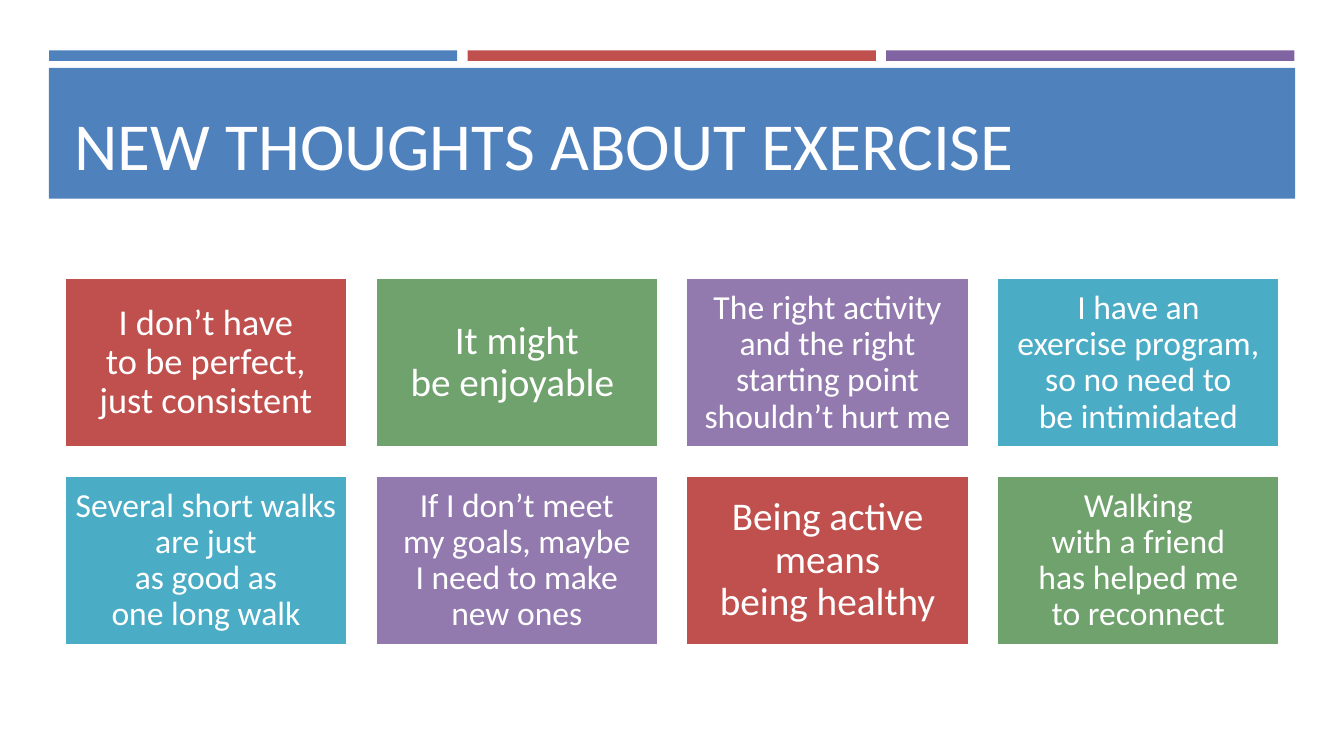
"""Build the slide of new thoughts about exercise."""
from dataclasses import dataclass

from pptx import Presentation
from pptx.dml.color import RGBColor
from pptx.enum.shapes import MSO_SHAPE
from pptx.enum.text import MSO_ANCHOR, MSO_AUTO_SIZE, PP_ALIGN
from pptx.shapes.autoshape import Shape
from pptx.slide import Slide
from pptx.text.text import TextFrame
from pptx.util import Pt

RECT = MSO_SHAPE.RECTANGLE
MIDDLE, BOTTOM = MSO_ANCHOR.MIDDLE, MSO_ANCHOR.BOTTOM
LEFT, CENTER = PP_ALIGN.LEFT, PP_ALIGN.CENTER
FIXED = MSO_AUTO_SIZE.NONE


@dataclass(frozen=True)
class Theme:
    """Hold the colours and type sizes."""
    font: str = "Calibri"
    blue: str = "4F81BD"
    red: str = "C0504D"
    plum: str = "8064A2"
    green: str = "6FA26C"
    lilac: str = "927AAE"
    teal: str = "4BACC6"
    white: str = "FFFFFF"
    cream: str = "FFFEFF"
    title: int = 48
    large: int = 28
    medium: int = 26
    small: int = 24


@dataclass(frozen=True)
class Box:
    """Place a rectangle, in points."""
    left: float
    top: float
    width: float
    height: float


@dataclass(frozen=True)
class Card:
    """Describe one thought."""
    text: str
    color: str
    size: int


THEME = Theme()
BARS = (THEME.blue, THEME.red, THEME.plum)
BAND = Box(34.9, 48.5, 890.2, 93.5)
HEAD = Box(46, 55.4, 868.3, 79.9)
COLS = 4
CARDS = (
    Card("I don’t have\nto be perfect,\njust consistent", THEME.red, THEME.medium),
    Card("It might\nbe enjoyable ", THEME.green, THEME.large),
    Card("The right activity and the right starting point shouldn’t hurt me",
         THEME.lilac, THEME.small),
    Card("I have an\nexercise program, so no need to\nbe intimidated",
         THEME.teal, THEME.small),
    Card("Several short walks are just\nas good as\none long walk",
         THEME.teal, THEME.small),
    Card("If I don’t meet\nmy goals, maybe\nI need to make new ones",
         THEME.lilac, THEME.small),
    Card("Being active means\nbeing healthy", THEME.red, THEME.large),
    Card("Walking\nwith a friend\nhas helped me\nto reconnect",
         THEME.green, THEME.small),
)


def apply(item: object, values: dict[str, object]) -> None:
    """Set each named value on the item."""
    for name, value in values.items():
        setattr(item, name, value)


def write(frame: TextFrame, text: str, size: int, color: str,
          look: dict[str, object], para: dict[str, object]) -> None:
    """Fill a text frame with one styled paragraph."""
    apply(frame, {"word_wrap": True, "auto_size": FIXED, **look})
    line = frame.paragraphs[0]
    line.text = text
    apply(line, para)
    for run in line.runs:
        apply(run.font, {"name": THEME.font, "size": Pt(size)})
        run.font.color.rgb = RGBColor.from_string(color)


def block(slide: Slide, box: Box, color: str) -> Shape:
    """Draw a plain filled rectangle."""
    shape = slide.shapes.add_shape(
        RECT, Pt(box.left), Pt(box.top), Pt(box.width), Pt(box.height))
    shape.shadow.inherit = False
    shape.fill.solid()
    shape.fill.fore_color.rgb = RGBColor.from_string(color)
    shape.line.fill.background()
    return shape


def draw_card(slide: Slide, card: Card, box: Box) -> None:
    """Draw one thought on its white-edged card."""
    shape = block(slide, box, card.color)
    shape.line.color.rgb = RGBColor.from_string(THEME.white)
    shape.line.width = Pt(1.75)
    sides = ("left", "top", "right", "bottom")
    look = {f"margin_{side}": Pt(0.3 * card.size) for side in sides}
    write(shape.text_frame, card.text, card.size, THEME.white,
          {"vertical_anchor": MIDDLE, **look},
          {"alignment": CENTER, "line_spacing": 0.9})


def draw_title(slide: Slide) -> None:
    """Set the title in front of its band."""
    block(slide, BAND, THEME.blue)
    title = slide.shapes.title
    title.element.getparent().append(title.element)
    apply(title, {"left": Pt(HEAD.left), "top": Pt(HEAD.top),
                  "width": Pt(HEAD.width), "height": Pt(HEAD.height)})
    write(title.text_frame, "NEW THOUGHTS ABOUT EXERCISE", THEME.title,
          THEME.cream, {"vertical_anchor": BOTTOM}, {"alignment": LEFT})


def main() -> None:
    """Build and save the deck."""
    deck = Presentation()
    apply(deck, {"slide_width": Pt(960), "slide_height": Pt(540)})
    slide = deck.slides.add_slide(deck.slide_layouts[5])
    for col, color in enumerate(BARS):
        block(slide, Box(35 + 299 * col, 36, 291.6, 7.5), color)
    draw_title(slide)
    for index, card in enumerate(CARDS):
        row, col = divmod(index, COLS)
        draw_card(slide, card,
                  Box(46.2 + 222 * col, 198.7 + 141.2 * row, 201.8, 121))
    deck.save("out.pptx")


if __name__ == "__main__":
    main()
